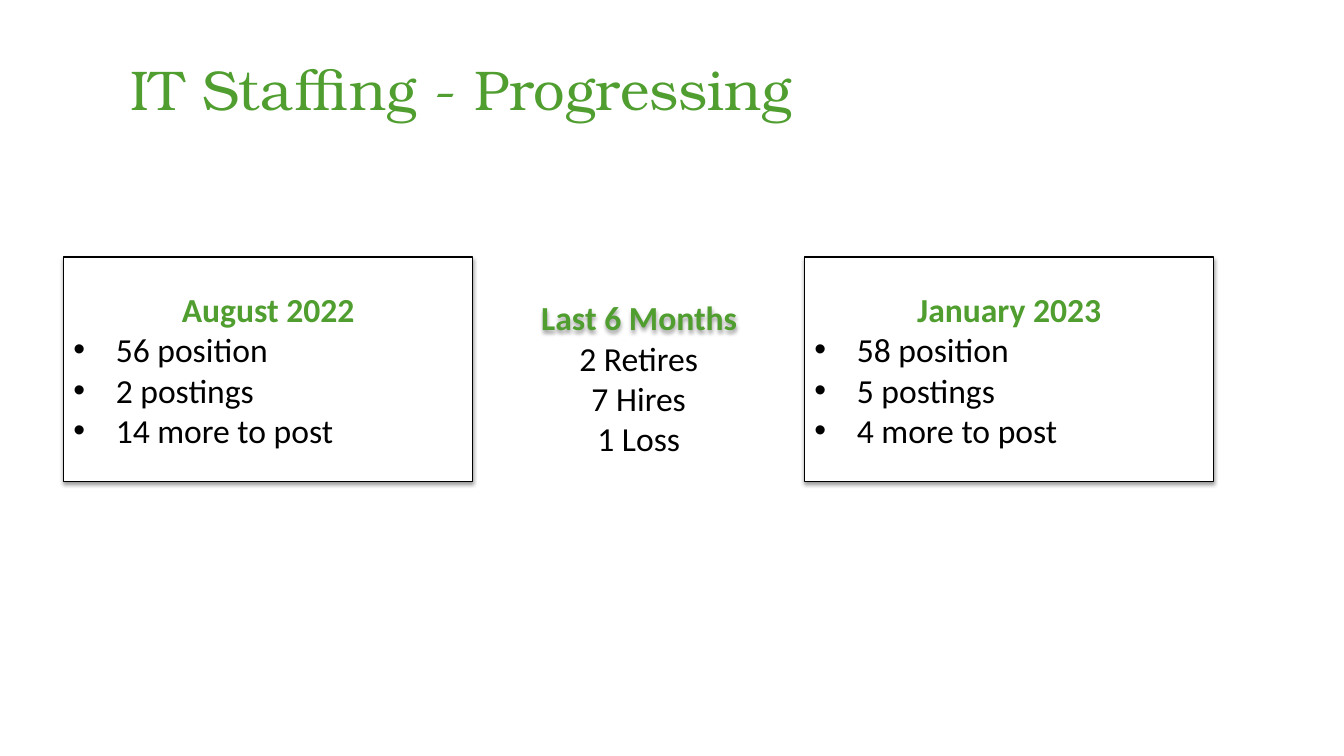
from dataclasses import dataclass

from lxml.etree import SubElement
from pptx import Presentation
from pptx.dml.color import RGBColor
from pptx.enum.shapes import MSO_SHAPE
from pptx.enum.text import MSO_ANCHOR, PP_ALIGN
from pptx.oxml.ns import qn
from pptx.shapes.autoshape import Shape
from pptx.slide import Slide
from pptx.text.text import _Paragraph as Paragraph
from pptx.util import Inches, Pt

GREEN = RGBColor(0x50, 0x9E, 0x2F)
BLACK = RGBColor(0, 0, 0)
WHITE = RGBColor(255, 255, 255)
CARD_TOP, CARD_WIDTH, CARD_HEIGHT = 2.55, 4.06, 2.23


@dataclass
class StaffingCard:
    left: float
    heading: str
    items: list[str]


CARDS = [
    StaffingCard(0.63, "August 2022", ["56 position", "2 postings", "14 more to post"]),
    StaffingCard(7.98, "January 2023", ["58 position", "5 postings", "4 more to post"]),
]
CHANGES = ["2 Retires", "7 Hires", "1 Loss"]


def style_paragraph(para: Paragraph, color: RGBColor, size: float = 24,
                    font_name: str = "Calibri", bold: bool = False) -> None:
    for span in para.runs:
        span.font.name = font_name
        span.font.size = Pt(size)
        span.font.bold = bold
        span.font.color.rgb = color


def add_bullet(para: Paragraph) -> None:
    properties = para._p.get_or_add_pPr()
    properties.set("marL", str(Inches(0.42)))
    properties.set("indent", str(Inches(-0.42)))
    SubElement(properties, qn("a:buFont"), typeface="Arial")
    SubElement(properties, qn("a:buChar"), char="•")


def add_shadow(shape: Shape) -> None:
    shape.shadow.inherit = False
    effects = shape.element.spPr.find(qn("a:effectLst"))
    shadow = SubElement(effects, qn("a:outerShdw"), blurRad=str(Pt(3.1)),
                        dist=str(Pt(1.6)), dir="5400000", rotWithShape="0")
    color = SubElement(shadow, qn("a:srgbClr"), val=str(BLACK))
    SubElement(color, qn("a:alpha"), val="38000")


def add_text(page: Slide, left: float, top: float, width: float, height: float,
             text: str) -> Shape:
    box = page.shapes.add_textbox(Inches(left), Inches(top), Inches(width), Inches(height))
    box.text_frame.word_wrap = True
    box.text_frame.text = text
    return box


def add_card(page: Slide, card: StaffingCard) -> None:
    box = page.shapes.add_shape(MSO_SHAPE.RECTANGLE, Inches(card.left), Inches(CARD_TOP),
                                Inches(CARD_WIDTH), Inches(CARD_HEIGHT))
    box.fill.solid()
    box.fill.fore_color.rgb = WHITE
    box.line.color.rgb = BLACK
    box.line.width = Pt(0.75)
    add_shadow(box)
    frame = box.text_frame
    frame.word_wrap = True
    frame.vertical_anchor = MSO_ANCHOR.MIDDLE
    frame.text = "\n".join([card.heading, *card.items])
    heading, *items = frame.paragraphs
    heading.alignment = PP_ALIGN.CENTER
    style_paragraph(heading, GREEN, bold=True)
    for para in items:
        para.alignment = PP_ALIGN.LEFT
        add_bullet(para)
        style_paragraph(para, BLACK)


def main() -> None:
    deck = Presentation()
    deck.slide_width, deck.slide_height = Inches(13.33), Inches(7.5)
    page = deck.slides.add_slide(deck.slide_layouts[6])

    # Title
    title = add_text(page, 1.2, 0.57, 11.93, 1.08, "IT Staffing - Progressing")
    title_para = title.text_frame.paragraphs[0]
    title_para.line_spacing = 0.9
    style_paragraph(title_para, GREEN, 40, "TeX Gyre Bonum")

    # Staffing before and after
    for card in CARDS:
        add_card(page, card)

    # Changes between the two dates
    changes = add_text(page, 4.97, 3.3, 2.73, 1.31, "\n".join(CHANGES))
    for para in changes.text_frame.paragraphs:
        para.alignment = PP_ALIGN.CENTER
        style_paragraph(para, BLACK)

    period = add_text(page, 4.31, CARD_TOP, CARD_WIDTH, 1.2, "Last 6 Months")
    period.text_frame.vertical_anchor = MSO_ANCHOR.MIDDLE
    period_para = period.text_frame.paragraphs[0]
    period_para.alignment = PP_ALIGN.CENTER
    style_paragraph(period_para, GREEN, bold=True)
    add_shadow(period)

    deck.save("out.pptx")


if __name__ == "__main__":
    main()
